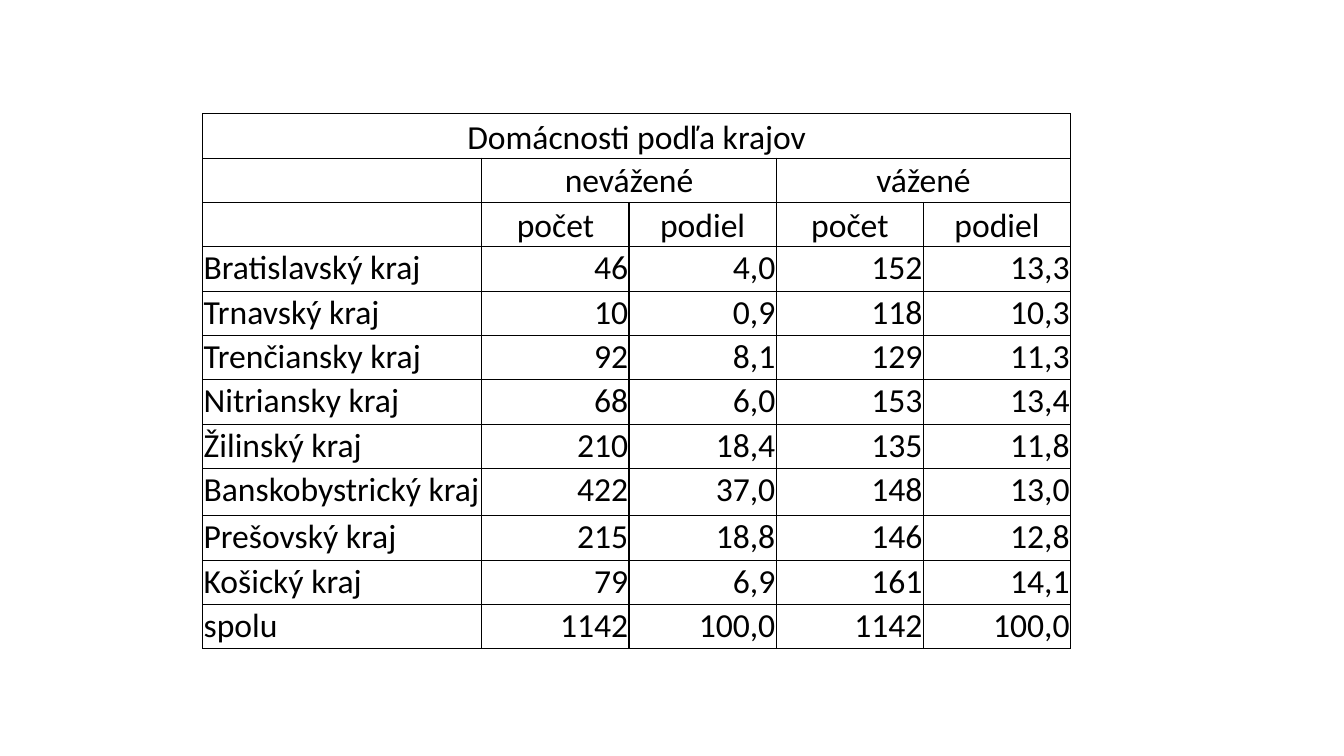
from typing import NamedTuple

from lxml.etree import SubElement
from pptx import Presentation
from pptx.dml.color import RGBColor
from pptx.enum.text import MSO_ANCHOR, PP_ALIGN
from pptx.oxml.ns import qn
from pptx.table import Table, _Cell
from pptx.util import Inches, Pt

BLACK = RGBColor(0x00, 0x00, 0x00)
WHITE = RGBColor(0xFF, 0xFF, 0xFF)

# Grid of the table, in inches
LEFT, TOP = 2.01, 1.13
NAME_WIDTH, NUMBER_WIDTH, NUMBER_COLUMNS = 2.77, 1.46, 4
ROW_HEIGHT, TALL_ROW_HEIGHT = 0.44, 0.47
TALL_ROW = 8
INSET = 0.01


class Heading(NamedTuple):
    text: str
    row: int
    column: int
    span: int
    anchor: MSO_ANCHOR


class Region(NamedTuple):
    name: str
    raw_count: str
    raw_share: str
    weighted_count: str
    weighted_share: str


HEADINGS = [
    Heading("Domácnosti podľa krajov", 0, 0, 5, MSO_ANCHOR.BOTTOM),
    Heading("nevážené", 1, 1, 2, MSO_ANCHOR.MIDDLE),
    Heading("vážené", 1, 3, 2, MSO_ANCHOR.MIDDLE),
    *(Heading(text, 2, column, 1, MSO_ANCHOR.BOTTOM)
      for column, text in enumerate(["počet", "podiel"] * 2, start=1)),
]
HEADING_ROWS = 3

REGIONS = [
    Region("Bratislavský kraj", "46", "4,0", "152", "13,3"),
    Region("Trnavský kraj", "10", "0,9", "118", "10,3"),
    Region("Trenčiansky kraj", "92", "8,1", "129", "11,3"),
    Region("Nitriansky kraj", "68", "6,0", "153", "13,4"),
    Region("Žilinský kraj", "210", "18,4", "135", "11,8"),
    Region("Banskobystrický kraj", "422", "37,0", "148", "13,0"),
    Region("Prešovský kraj", "215", "18,8", "146", "12,8"),
    Region("Košický kraj", "79", "6,9", "161", "14,1"),
    Region("spolu", "1142", "100,0", "1142", "100,0"),
]


def write(cell: _Cell, text: str, *, align: PP_ALIGN = PP_ALIGN.LEFT,
          anchor: MSO_ANCHOR = MSO_ANCHOR.TOP, size: float = 24,
          font: str = "Calibri", color: RGBColor = BLACK) -> None:
    cell.vertical_anchor = anchor
    para = cell.text_frame.paragraphs[0]
    para.alignment = align
    span = para.add_run()
    span.text = text
    span.font.size = Pt(size)
    span.font.name = font
    span.font.color.rgb = color


def style_cell(cell: _Cell) -> None:
    cell.margin_left = cell.margin_right = cell.margin_top = Inches(INSET)
    cell.margin_bottom = 0
    # Borders come before the fill in the cell's properties
    properties = cell._tc.get_or_add_tcPr()
    for side in ("a:lnL", "a:lnR", "a:lnT", "a:lnB"):
        line = SubElement(properties, qn(side), w=str(Pt(1)))
        paint = SubElement(line, qn("a:solidFill"))
        SubElement(paint, qn("a:srgbClr"), val=str(BLACK))
    cell.fill.solid()
    cell.fill.fore_color.rgb = WHITE


def set_grid(table: Table) -> None:
    table.first_row = table.horz_banding = False
    for index, column in enumerate(table.columns):
        column.width = Inches(NUMBER_WIDTH if index else NAME_WIDTH)
    for index, row in enumerate(table.rows):
        row.height = Inches(TALL_ROW_HEIGHT if index == TALL_ROW else ROW_HEIGHT)
    for cell in table.iter_cells():
        style_cell(cell)


def fill_headings(table: Table) -> None:
    for heading in HEADINGS:
        cell = table.cell(heading.row, heading.column)
        if heading.span > 1:
            cell.merge(table.cell(heading.row, heading.column + heading.span - 1))
        write(cell, heading.text, align=PP_ALIGN.CENTER, anchor=heading.anchor)


def fill_regions(table: Table) -> None:
    for row, region in enumerate(REGIONS, start=HEADING_ROWS):
        for column, text in enumerate(region):
            align = PP_ALIGN.RIGHT if column else PP_ALIGN.LEFT
            write(table.cell(row, column), text, align=align)


def main() -> None:
    deck = Presentation()
    deck.slide_width, deck.slide_height = Inches(13.33), Inches(7.5)
    page = deck.slides.add_slide(deck.slide_layouts[6])

    # Table of households by region
    rows = HEADING_ROWS + len(REGIONS)
    width = NAME_WIDTH + NUMBER_COLUMNS * NUMBER_WIDTH
    height = (rows - 1) * ROW_HEIGHT + TALL_ROW_HEIGHT
    frame = page.shapes.add_table(rows, 1 + NUMBER_COLUMNS, Inches(LEFT),
                                  Inches(TOP), Inches(width), Inches(height))
    set_grid(frame.table)
    fill_headings(frame.table)
    fill_regions(frame.table)

    deck.save("out.pptx")


if __name__ == "__main__":
    main()
